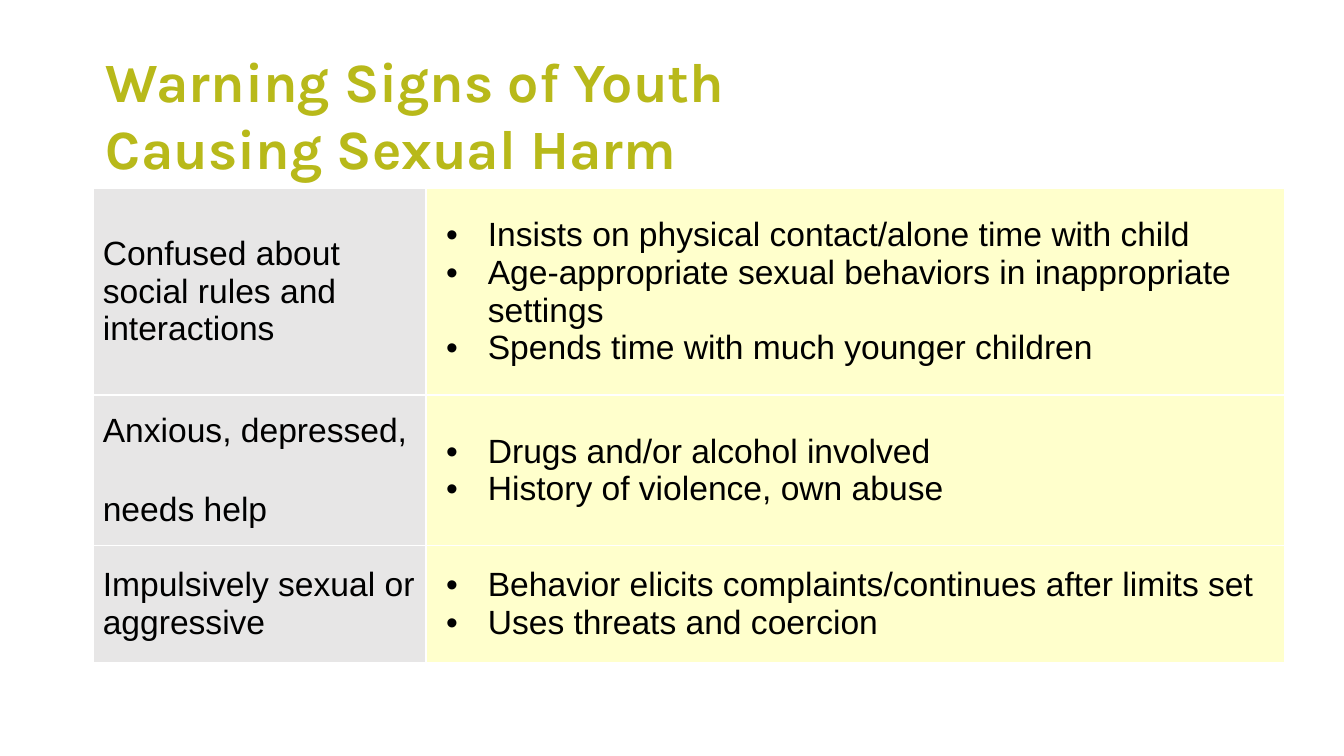
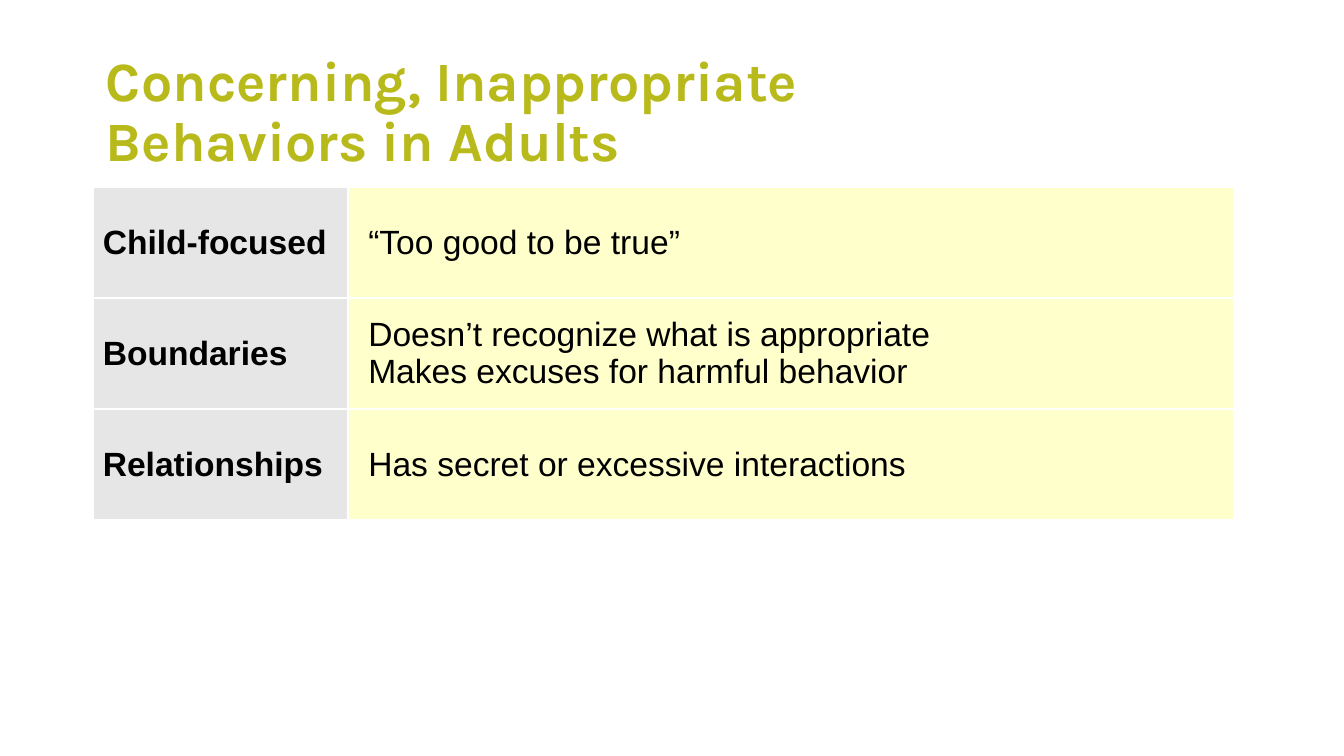
"""Two slides of warning signs, each a title above a two-column table."""
import pptx
import pptx.util
import pptx.dml.color
import pptx.enum.text
import pptx.oxml.ns
import lxml.etree

Inches = pptx.util.Inches
Pt = pptx.util.Pt
qn = pptx.oxml.ns.qn
MIDDLE = pptx.enum.text.MSO_ANCHOR.MIDDLE

COLORS = {"title": "B8B91A", "text": "000000", "sign": "E7E6E6",
          "example": "FFFF00", "border": "FFFFFF"}
LEFT = 0.69
SIDE_MARGIN = Pt(5.4)

SLIDES = [
    {"title": "Warning Signs of Youth \vCausing Sexual Harm",
     "spacing": 1.0, "top": 1.4, "columns": [2.48, 6.39], "rows": [1.54, 1.12, 0.87],
     "bold_signs": False, "bullets": True,
     "signs": [
         ("Confused about social rules and interactions",
          ["Insists on physical contact/alone time with child",
           "Age-appropriate sexual behaviors in inappropriate settings",
           "Spends time with much younger children"]),
         ("Anxious, depressed, \vneeds help",
          ["Drugs and/or alcohol involved", "History of violence, own abuse"]),
         ("Impulsively sexual or aggressive",
          ["Behavior elicits complaints/continues after limits set",
           "Uses threats and coercion"])]},
    {"title": "Concerning, Inappropriate\vBehaviors in Adults",
     "spacing": 0.9, "top": 1.39, "columns": [1.9, 6.59], "rows": [2.48 / 3] * 3,
     "bold_signs": True, "bullets": False,
     "signs": [
         ("Child-focused", ["“Too good to be true”"]),
         ("Boundaries", ["Doesn’t recognize what is appropriate",
                         "Makes excuses for harmful behavior"]),
         ("Relationships", ["Has secret or excessive interactions"])]},
]


def style_runs(paragraph, font, size, color, bold):
    for run in paragraph.runs:
        run.font.name = font
        run.font.size = Pt(size)
        run.font.bold = bold
        run.font.color.rgb = pptx.dml.color.RGBColor.from_string(COLORS[color])


def fill_cell(cell, lines, fill, left_margin, bold, bullets):
    cell.vertical_anchor = MIDDLE
    cell.margin_left, cell.margin_right = left_margin, SIDE_MARGIN
    cell.margin_top = cell.margin_bottom = Inches(0.04)
    cell.fill.solid()
    cell.fill.fore_color.rgb = pptx.dml.color.RGBColor.from_string(COLORS[fill])
    properties = cell._tc.get_or_add_tcPr()
    if fill == "example":
        tint = properties.find(qn("a:solidFill"))[0]
        lxml.etree.SubElement(tint, qn("a:alpha"), val="20000")
    for position, side in enumerate(["lnL", "lnR", "lnT", "lnB"]):
        border = lxml.etree.Element(qn("a:" + side), w=str(Pt(1)))
        paint = lxml.etree.SubElement(border, qn("a:solidFill"))
        lxml.etree.SubElement(paint, qn("a:srgbClr"), val=COLORS["border"])
        properties.insert(position, border)
    cell.text_frame.text = "\n".join(lines)
    for paragraph in cell.text_frame.paragraphs:
        if bullets:
            layout = paragraph._p.get_or_add_pPr()
            layout.set("marL", str(Inches(0.31)))
            layout.set("indent", str(Inches(-0.31)))
            lxml.etree.SubElement(layout, qn("a:buFont"), typeface="Arial")
            lxml.etree.SubElement(layout, qn("a:buChar"), char="•")
        style_runs(paragraph, "Arial", 18, "text", bold)


deck = pptx.Presentation()
deck.slide_width = Inches(10)
deck.slide_height = deck.slide_width * 9 // 16

for content in SLIDES:
    slide = deck.slides.add_slide(deck.slide_layouts[6])

    title = slide.shapes.add_textbox(Inches(LEFT), Inches(0.3), Inches(8.62), Inches(1.09))
    title.text_frame.word_wrap = True
    title.text_frame.vertical_anchor = MIDDLE
    title.text_frame.text = content["title"]
    heading = title.text_frame.paragraphs[0]
    heading.line_spacing = content["spacing"]
    style_runs(heading, "Karla", 29.7, "title", True)

    signs = slide.shapes.add_table(
        len(content["rows"]), len(content["columns"]), Inches(LEFT), Inches(content["top"]),
        Inches(sum(content["columns"])), Inches(sum(content["rows"]))).table
    signs.first_row = signs.horz_banding = False
    for column, width in zip(signs.columns, content["columns"]):
        column.width = Inches(width)
    for row, height, (sign, examples) in zip(signs.rows, content["rows"], content["signs"]):
        row.height = Inches(height)
        fill_cell(row.cells[0], [sign], "sign", SIDE_MARGIN, content["bold_signs"], False)
        fill_cell(row.cells[1], examples, "example", Inches(0.15), False, content["bullets"])

deck.save("out.pptx")
